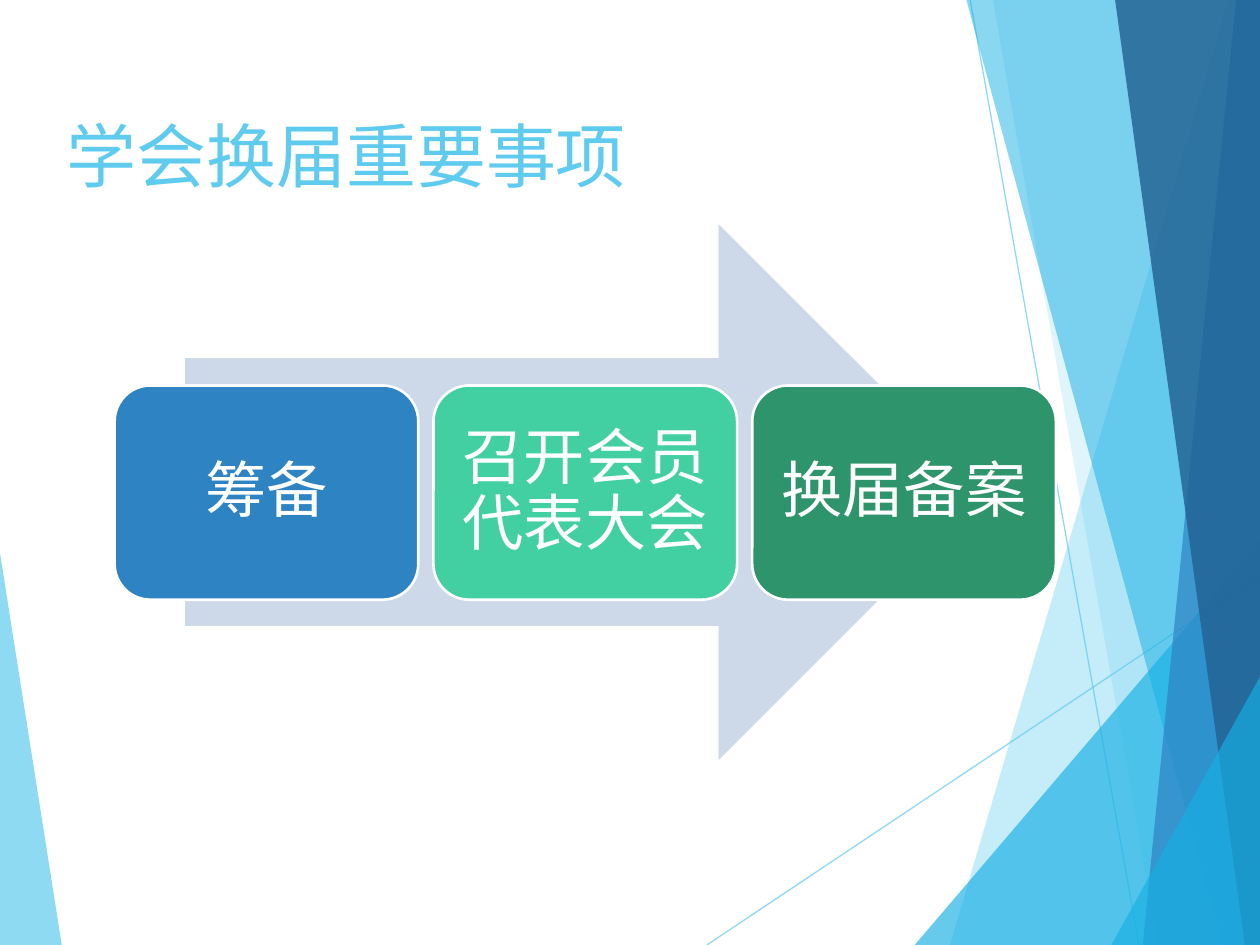
from dataclasses import dataclass

from lxml.etree import SubElement
from pptx import Presentation
from pptx.dml.color import RGBColor
from pptx.enum.shapes import MSO_CONNECTOR, MSO_SHAPE
from pptx.enum.text import MSO_ANCHOR, PP_ALIGN
from pptx.oxml.ns import qn
from pptx.util import Inches, Pt


@dataclass(frozen=True)
class Theme:
    font: str = "Lato"
    title: int = 40
    body: int = 35
    white: str = "FFFFFF"
    sky: str = "5FCBEF"
    cyan: str = "17B0E4"
    blue: str = "2E83C3"
    navy: str = "226292"
    mint: str = "42D0A2"
    green: str = "2E946B"
    pale: str = "CDD9E9"


class Deck:
    def __init__(self, slide, theme):
        self.slide = slide
        self.shapes = slide.shapes
        self.theme = theme

    def fade(self, item, alpha):
        """Set the opacity, in percent, of an item's one colour."""
        for color in item._element.spPr.iter(qn("a:srgbClr")):
            SubElement(color, qn("a:alpha"), val=str(alpha * 1000))

    def paint(self, shape, fill, line=None):
        shape.shadow.inherit = False
        shape.fill.solid()
        shape.fill.fore_color.rgb = RGBColor.from_string(fill)
        if line:
            shape.line.color.rgb = RGBColor.from_string(line)
            shape.line.width = Pt(1.5)
        else:
            shape.line.fill.background()

    def facet(self, points, fill, alpha):
        first, *rest = [(Inches(x), Inches(y)) for x, y in points]
        pen = self.shapes.build_freeform(*first, scale=1.0)
        pen.add_line_segments(rest, close=True)
        shape = pen.convert_to_shape()
        self.paint(shape, fill)
        self.fade(shape, alpha)

    def line(self, *ends):
        line = self.shapes.add_connector(
            MSO_CONNECTOR.STRAIGHT, *[Inches(end) for end in ends])
        line.line.color.rgb = RGBColor.from_string(self.theme.sky)
        line.line.width = Pt(0.75)
        self.fade(line, 70)
        SubElement(line._element.spPr, qn("a:effectLst"))

    def label(self, frame, text, size, color):
        frame.word_wrap = True
        para = frame.paragraphs[0]
        para.text = text
        para.font.name = self.theme.font
        para.font.size = Pt(size)
        para.font.color.rgb = RGBColor.from_string(color)
        return para

    def title(self, text, *box):
        shape = self.shapes.add_textbox(*[Inches(n) for n in box])
        self.label(shape.text_frame, text, self.theme.title, self.theme.sky)

    def block(self, kind, box, fill, line=None):
        shape = self.shapes.add_shape(kind, *[Inches(n) for n in box])
        self.paint(shape, fill, line)
        return shape

    def card(self, text, box, fill):
        white = self.theme.white
        shape = self.block(MSO_SHAPE.ROUNDED_RECTANGLE, box, fill, white)
        frame = shape.text_frame
        frame.vertical_anchor = MSO_ANCHOR.MIDDLE
        frame.margin_left = frame.margin_right = Inches(0.13)
        frame.margin_top = frame.margin_bottom = Inches(0.15)
        para = self.label(frame, text, self.theme.body, white)
        para.alignment = PP_ALIGN.CENTER
        para.line_spacing = 0.9


def main():
    show = Presentation()
    show.slide_width, show.slide_height = Inches(10), Inches(7.5)
    theme = Theme()
    deck = Deck(show.slides.add_slide(show.slide_layouts[6]), theme)

    deck.facet([(0, 4.39), (0.49, 7.5), (0, 7.5)], theme.sky, 70)
    deck.line(5.61, 7.5, 10, 4.57)
    deck.line(7.7, 0, 9.04, 7.5)

    top, base, edge = 0, 7.5, 10
    facets = [
        ([(9.75, top), (7.54, base), (edge, base), (edge, top)], theme.sky, 36),
        ([(7.88, top), (9.19, base), (edge, base), (edge, top)], theme.sky, 20),
        ([(7.26, base), (edge, 4.29), (edge, base)], theme.cyan, 66),
        ([(7.67, top), (9.7, base), (edge, base), (edge, top)], theme.cyan, 50),
        ([(9.81, top), (9.07, base), (edge, base), (edge, top)], theme.blue, 70),
        ([(8.85, top), (9.88, base), (edge, base), (edge, top)], theme.navy, 82),
        ([(8.82, base), (edge, 5.37), (edge, base)], theme.cyan, 66),
    ]
    for points, fill, alpha in facets:
        deck.facet(points, fill, alpha)

    deck.title("学会换届重要事项", 0.43, 0.84, 7.17, 0.94)
    deck.block(MSO_SHAPE.RIGHT_ARROW, (1.47, 1.78, 6.36, 4.25), theme.pale)

    steps = [
        ("筹备", theme.blue),
        ("召开会员代表大会", theme.mint),
        ("换届备案", theme.green),
    ]
    left, pitch = 0.91, 2.53
    for i, (text, fill) in enumerate(steps):
        deck.card(text, (left + i * pitch, 3.06, 2.41, 1.7), fill)

    show.save("out.pptx")


if __name__ == "__main__":
    main()
